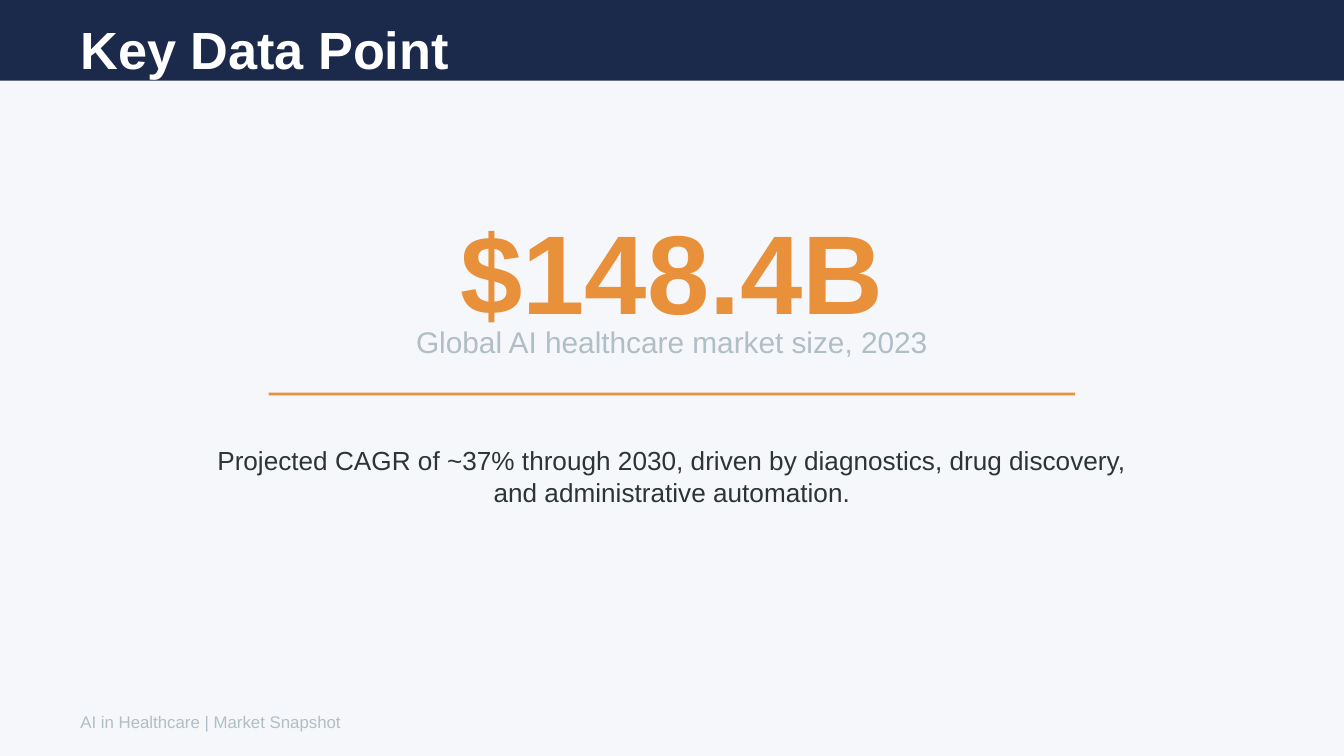
from pptx import Presentation
from pptx.dml.color import RGBColor
from pptx.enum.shapes import MSO_SHAPE
from pptx.enum.text import MSO_ANCHOR, PP_ALIGN
from pptx.util import Pt

RECTANGLE = MSO_SHAPE.RECTANGLE
TOP, MIDDLE = MSO_ANCHOR.TOP, MSO_ANCHOR.MIDDLE
LEFT, CENTER = PP_ALIGN.LEFT, PP_ALIGN.CENTER

WIDTH, HEIGHT = 720, 405
NAVY, ORANGE, GREY = "1B2A4A", "E8913A", "B0BEC5"
PALE, WHITE, DARK = "F5F7FA", "FFFFFF", "2D3436"


def color(hex_string):
    return RGBColor.from_string(hex_string)


presentation = Presentation()
presentation.slide_width = Pt(WIDTH)
presentation.slide_height = Pt(HEIGHT)
slide = presentation.slides.add_slide(presentation.slide_layouts[6])

# Backdrop, header band and divider: left, top, width, height, fill
bands = [
    (0, 0, WIDTH, HEIGHT, PALE),
    (0, 0, WIDTH, 43.2, NAVY),
    (144, 210.4, 432, 1.44, ORANGE),
]
for left, top, width, height, fill in bands:
    shape = slide.shapes.add_shape(RECTANGLE, Pt(left), Pt(top), Pt(width), Pt(height))
    shape.shadow.inherit = False
    shape.fill.solid()
    shape.fill.fore_color.rgb = color(fill)
    shape.line.fill.background()

# Title, key figure, caption, outlook and footer:
# left, top, width, height, anchor, alignment, size, bold, colour, wording
texts = [
    (36, 7.9, 288, 36, MIDDLE, LEFT, 28, True, WHITE, "Key Data Point"),
    (72, 101.5, 576, 86.4, MIDDLE, CENTER, 60, True, ORANGE, "$148.4B"),
    (72, 170, 576, 28.8, TOP, CENTER, 16, False, GREY,
     "Global AI healthcare market size, 2023"),
    (108, 234.7, 504, 57.6, TOP, CENTER, 14, False, DARK,
     "Projected CAGR of ~37% through 2030, driven by diagnostics, "
     "drug discovery, and administrative automation."),
    (36, 376.6, 648, 20.2, MIDDLE, LEFT, 9, False, GREY,
     "AI in Healthcare | Market Snapshot"),
]
for left, top, width, height, anchor, alignment, size, bold, text_color, wording in texts:
    box = slide.shapes.add_textbox(Pt(left), Pt(top), Pt(width), Pt(height))
    frame = box.text_frame
    frame.word_wrap = True
    frame.vertical_anchor = anchor
    paragraph = frame.paragraphs[0]
    paragraph.alignment = alignment
    run = paragraph.add_run()
    run.text = wording
    run.font.name = "Arial"
    run.font.size = Pt(size)
    run.font.bold = bold
    run.font.color.rgb = color(text_color)

presentation.save("out.pptx")
